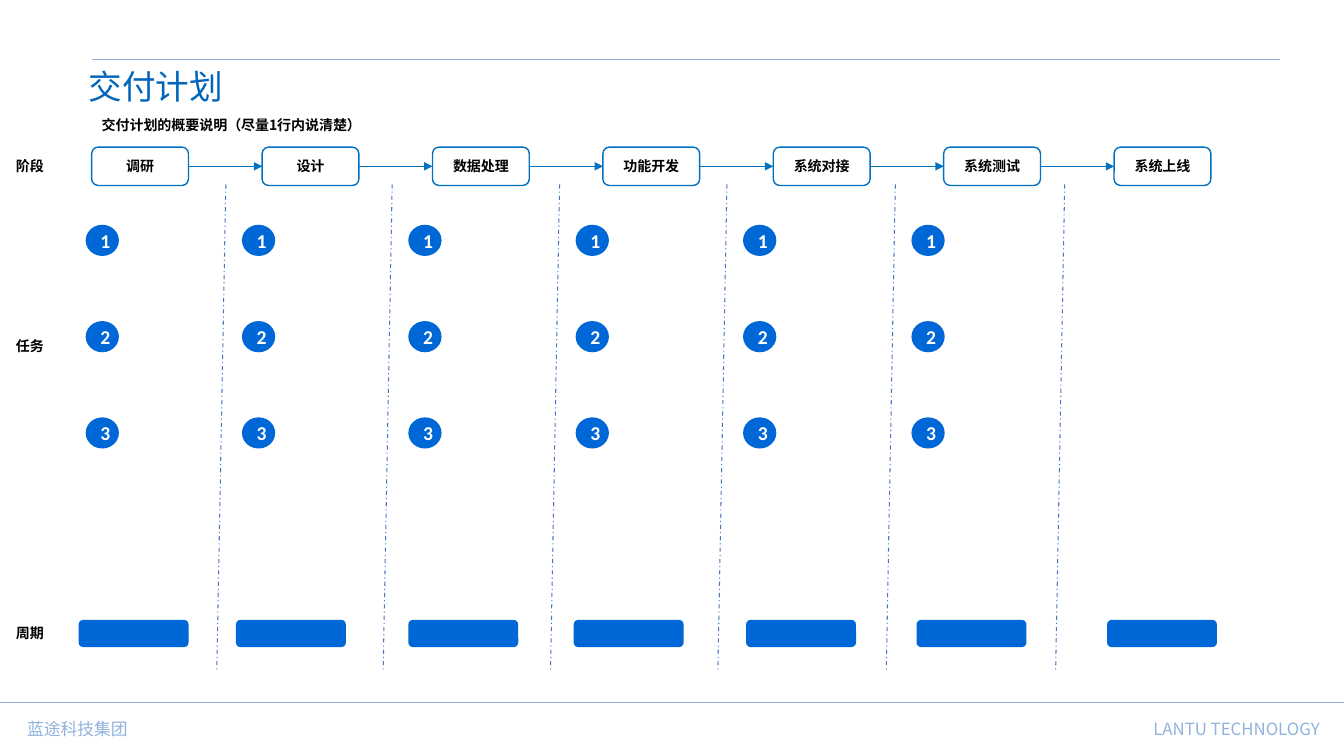
from lxml import etree
from pptx import Presentation
from pptx.dml.color import RGBColor
from pptx.enum import dml, shapes, text
from pptx.oxml import ns
from pptx.util import Inches, Pt

COLORS = {
    "title": "0065BB",
    "stage": "0070C0",
    "solid": "0067D6",
    "divider": "4874CB",
    "pale": "90B2DE",
    "black": "000000",
    "white": "FFFFFF",
}
CJK = "Noto Sans CJK SC"
STAGES = ["调研", "设计", "数据处理", "功能开发", "系统对接", "系统测试", "系统上线"]
STAGE_LEFT, STAGE_TOP, STAGE_STEP = 0.91, 1.46, 1.69
STAGE_WIDTH, STAGE_HEIGHT = 0.96, 0.38
DIVIDERS = [2.24, 3.89, 5.55, 7.21, 8.88, 10.56]
TASK_LEFTS = [0.85, 2.4, 4.05, 5.71, 7.37, 9.04]
PERIOD_LEFTS = [0.78, 2.34, 4.05, 5.69, 7.4, 9.09, 10.98]
ROW_LABELS = {"阶段": 1.51, "任务": 3.3, "周期": 6.15}


def rgb(name):
    return RGBColor.from_string(COLORS[name])


def write(frame, words, size, color, bold=False, font=CJK, align=text.PP_ALIGN.LEFT):
    para = frame.paragraphs[0]
    para.alignment = align
    span = para.add_run()
    span.text = words
    span.font.size = Pt(size)
    span.font.bold = bold
    span.font.name = font
    span.font.color.rgb = rgb(color)
    east_asian = etree.SubElement(span.font._element, ns.qn("a:ea"))
    east_asian.set("typeface", font)


def add_label(page, place, words, size, color, bold=False, wrap=True,
              align=text.PP_ALIGN.LEFT):
    box = page.shapes.add_textbox(*map(Inches, place))
    box.text_frame.word_wrap = wrap
    box.text_frame.auto_size = text.MSO_AUTO_SIZE.SHAPE_TO_FIT_TEXT
    write(box.text_frame, words, size, color, bold, align=align)


def add_block(page, kind, place, fill=None, line=None):
    block = page.shapes.add_shape(kind, *map(Inches, place))
    block.shadow.inherit = False
    if fill:
        block.fill.solid()
        block.fill.fore_color.rgb = rgb(fill)
    else:
        block.fill.background()
    if line:
        block.line.color.rgb = rgb(line)
        block.line.width = Pt(1)
    else:
        block.line.fill.background()
    block.text_frame.vertical_anchor = text.MSO_ANCHOR.MIDDLE
    return block


def add_line(page, start, end, color, width=1, dash=None, arrow=False):
    line = page.shapes.add_connector(
        shapes.MSO_CONNECTOR.STRAIGHT, *map(Inches, start + end))
    line.line.color.rgb = rgb(color)
    line.line.width = Pt(width)
    if dash:
        line.line.dash_style = dash
    if arrow:
        tip = etree.SubElement(line.line._get_or_add_ln(), ns.qn("a:tailEnd"))
        tip.set("type", "triangle")
    etree.SubElement(line._element.spPr, ns.qn("a:effectLst"))


def add_stages(page):
    rounded = shapes.MSO_SHAPE.ROUNDED_RECTANGLE
    middle = STAGE_TOP + STAGE_HEIGHT / 2
    for index, name in enumerate(STAGES):
        left = STAGE_LEFT + index * STAGE_STEP
        box = add_block(page, rounded, (left, STAGE_TOP, STAGE_WIDTH, STAGE_HEIGHT),
                        line="stage")
        write(box.text_frame, name, 10, "black", True, align=text.PP_ALIGN.CENTER)
        if index:
            previous_right = left - STAGE_STEP + STAGE_WIDTH
            add_line(page, (previous_right, middle), (left, middle), "stage", arrow=True)


def add_tasks(page):
    for left in TASK_LEFTS:
        for index in range(3):
            top = 2.23 + index * 0.955
            dot = add_block(page, shapes.MSO_SHAPE.OVAL, (left, top, 0.33, 0.31), "solid")
            write(dot.text_frame, str(index + 1), 14, "white", True, "Calibri",
                  text.PP_ALIGN.CENTER)


def add_footer(page):
    add_label(page, (10.38, 7.08, 2.81, 0.3), "LANTU TECHNOLOGY", 12, "pale",
              align=text.PP_ALIGN.RIGHT)
    add_label(page, (0.17, 7.08, 3.77, 0.3), "蓝途科技集团", 12, "pale")
    add_line(page, (-0.01, 6.97), (13.36, 6.97), "pale")


def main():
    deck = Presentation()
    deck.slide_width, deck.slide_height = Inches(13.33), Inches(7.5)
    page = deck.slides.add_slide(deck.slide_layouts[6])

    add_footer(page)

    # Heading
    add_label(page, (0.78, 0.6, 11.15, 0.5), "交付计划", 24, "title")
    add_line(page, (0.91, 0.59), (12.7, 0.59), "pale")
    add_label(page, (0.91, 1.11, 11.78, 0.27), "交付计划的概要说明（尽量1行内说清楚）",
              10, "black", True)

    # Stages with slightly slanted dividers
    add_stages(page)
    for left in DIVIDERS:
        add_line(page, (left, 1.83), (left - 0.09, 6.67), "divider", 0.75,
                 dml.MSO_LINE.DASH_DOT)

    # Tasks, row labels and periods
    add_tasks(page)
    for name, top in ROW_LABELS.items():
        add_label(page, (0.06, top, 0.48, 0.27), name, 10, "black", True, wrap=False)
    for left in PERIOD_LEFTS:
        add_block(page, shapes.MSO_SHAPE.ROUNDED_RECTANGLE, (left, 6.15, 1.09, 0.27), "solid")

    deck.save("out.pptx")


if __name__ == "__main__":
    main()
